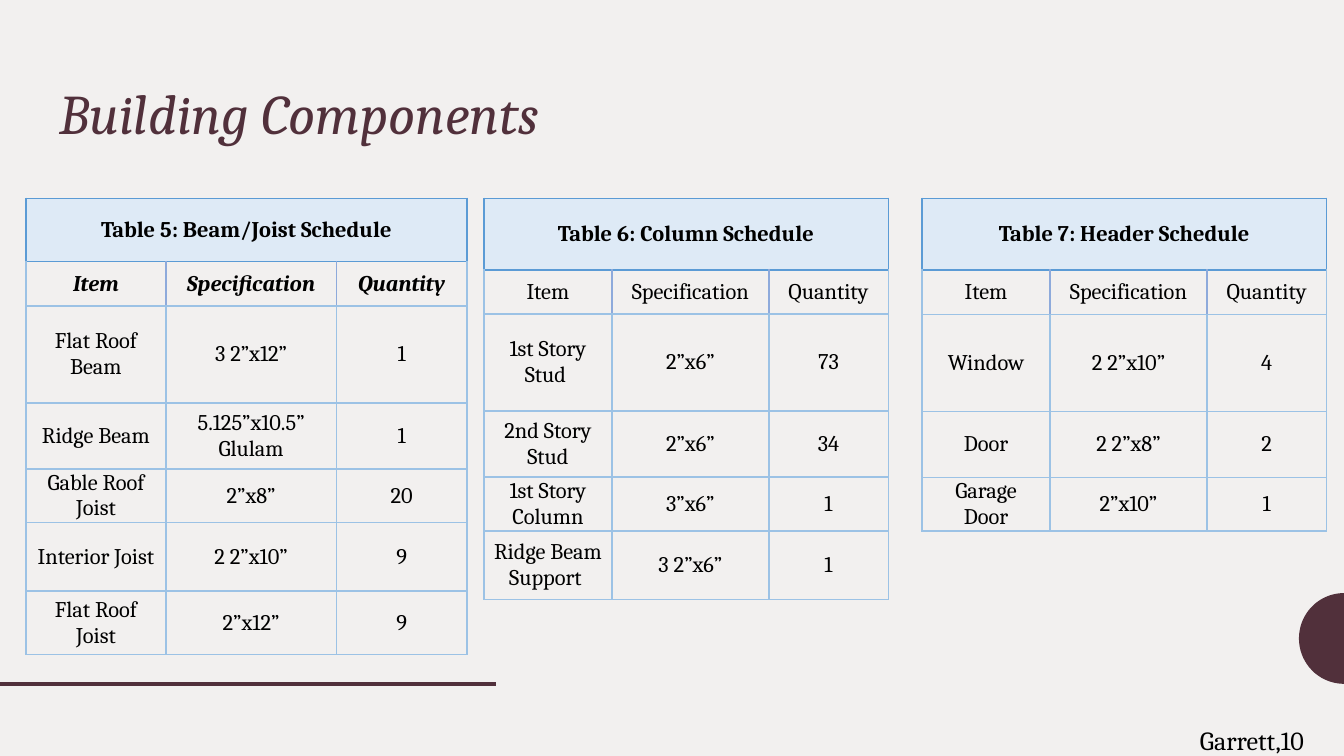
import math

import pptx
import pptx.dml.color
import pptx.enum.shapes
import pptx.enum.text
import pptx.oxml.ns
import pptx.util
from lxml import etree

WIDE = pptx.util.Inches(10)
HIGH = WIDE * 9 // 16
PLUM = "51303B"
SKY = "9CC2E5"
BLUE = "5B9BD5"
SLATE = "8EAADB"
MID = pptx.enum.text.MSO_ANCHOR.MIDDLE
LEFT = pptx.enum.text.PP_ALIGN.LEFT
CENTER = pptx.enum.text.PP_ALIGN.CENTER

HEADS = ["Item", "Specification", "Quantity"]
BEAMS = [
    ["Flat Roof Beam", "3 2”x12”", "1"],
    ["Ridge Beam", "5.125”x10.5” Glulam", "1"],
    ["Gable Roof Joist", "2”x8”", "20"],
    ["Interior Joist ", "2 2”x10”", "9"],
    ["Flat Roof Joist", "2”x12”", "9"],
]
POSTS = [
    ["1st Story Stud ", "2”x6”", "73"],
    ["2nd Story Stud", "2”x6”", "34"],
    ["1st Story Column", "3”x6”", "1"],
    ["Ridge Beam Support ", "3 2”x6”", "1"],
]
DOORS = [
    ["Window", "2 2”x10”", "4"],
    ["Door", "2 2”x8”", "2"],
    ["Garage Door", "2”x10”", "1"],
]
COLS = [104, 127, 97]
ROWS = [33, 72, 49, 38, 51, 47]


def color(code):
    return pptx.dml.color.RGBColor.from_string(code)


def area(left, top, width, height):
    return (int(WIDE * left / 100), int(HIGH * top / 100),
            int(WIDE * width / 100), int(HIGH * height / 100))


def write(frame, text, size=12, tint="000000", bold=False, slant=False,
          align=LEFT, hang=0, space=None):
    para = frame.paragraphs[0]
    para.alignment = align
    para.line_spacing = space
    if hang:
        prop = para._p.get_or_add_pPr()
        prop.set("marL", "0")
        prop.set("indent", str(-pptx.util.Inches(hang)))
    run = para.add_run()
    run.text = text
    run.font.name = "Cambria"
    run.font.size = pptx.util.Pt(size)
    run.font.bold = bold
    run.font.italic = slant
    run.font.color.rgb = color(tint)


def label(slide, box, text, anchor, **form):
    frame = slide.shapes.add_textbox(*box).text_frame
    frame.word_wrap = True
    frame.vertical_anchor = anchor
    for side in ("left", "top", "right", "bottom"):
        setattr(frame, "margin_" + side, pptx.util.Inches(0.1))
    write(frame, text, **form)


def edge(cell, sides):
    prop = cell._tc.get_or_add_tcPr()
    for side, tint in zip("LRTB", sides):
        line = etree.SubElement(prop, pptx.oxml.ns.qn("a:ln" + side),
                                w=str(pptx.util.Pt(1)))
        fill = etree.SubElement(line, pptx.oxml.ns.qn("a:solidFill"))
        etree.SubElement(fill, pptx.oxml.ns.qn("a:srgbClr"), val=tint)


def style(cell, row, col):
    if row == 0:
        edge(cell, [BLUE] * 4)
        cell.fill.solid()
        cell.fill.fore_color.rgb = color("DEEAF6")
    else:
        head = row == 1
        edge(cell, [SLATE if head and col > 0 else SKY,
                    SLATE if head and col < 2 else SKY,
                    BLUE if head else SKY, SKY])
        cell.fill.background()
    cell.vertical_anchor = MID
    cell.margin_left = cell.margin_right = pptx.util.Inches(0.07)
    cell.margin_top = cell.margin_bottom = 0


def chart(slide, box, title, body, top, strong=False):
    data = [[title, "", ""], HEADS] + body
    grid = slide.shapes.add_table(len(data), 3, *box).table
    grid.first_row = grid.horz_banding = False
    for col, part in zip(grid.columns, COLS):
        col.width = int(box[2] * part / sum(COLS))
    parts = [top] + ROWS[:len(data) - 1]
    for row, part in zip(grid.rows, parts):
        row.height = int(box[3] * part / sum(parts))
    grid.cell(0, 0).merge(grid.cell(0, 2))
    for r, line in enumerate(data):
        for c, text in enumerate(line):
            cell = grid.cell(r, c)
            style(cell, r, c)
            if text:
                loud = strong and r == 1
                write(cell.text_frame, text, bold=r == 0 or loud, slant=loud,
                      align=CENTER, hang=0.08 if r and c < 2 else 0)


def trim(slide, disc, rule):
    left, top, width, height = disc
    steps = 48
    turns = [math.pi * (0.5 + k / steps) for k in range(steps + 1)]
    spots = [(left + width + width * math.cos(t),
              top + height / 2 * (1 - math.sin(t))) for t in turns]
    pen = slide.shapes.build_freeform(*spots[0])
    pen.add_line_segments(spots[1:], close=True)
    half = pen.convert_to_shape()
    half.shadow.inherit = False
    half.fill.solid()
    half.fill.fore_color.rgb = color(PLUM)
    half.line.fill.background()
    x, y, span, _ = rule
    line = slide.shapes.add_connector(
        pptx.enum.shapes.MSO_CONNECTOR.STRAIGHT, x, y, x + span, y)
    line.line.color.rgb = color(PLUM)
    line.line.width = pptx.util.Pt(2)
    etree.SubElement(line._element.spPr, pptx.oxml.ns.qn("a:effectLst"))


def main():
    deck = pptx.Presentation()
    deck.slide_width, deck.slide_height = WIDE, HIGH
    slide = deck.slides.add_slide(deck.slide_layouts[6])
    slide.background.fill.solid()
    slide.background.fill.fore_color.rgb = color("F2F0EF")
    trim(slide, area(96.65, 78.45, 3.35, 12), area(0, 90.45, 36.9, 0))
    label(slide, area(3.45, 6.5, 87, 14.7), "Building Components",
          pptx.enum.text.MSO_ANCHOR.BOTTOM,
          size=30, tint=PLUM, slant=True, space=0.9)
    label(slide, area(88.3, 95, 14, 5.7), "Garrett,10", MID, size=14)
    chart(slide, area(1.94, 26.25, 32.8, 60),
          "Table 5: Beam/Joist Schedule", BEAMS, 47, strong=True)
    chart(slide, area(36, 26.25, 30.1, 52.7),
          "Table 6: Column Schedule", POSTS, 53)
    chart(slide, area(68.6, 26.25, 30.1, 43.7),
          "Table 7: Header Schedule", DOORS, 53)
    deck.save("out.pptx")


if __name__ == "__main__":
    main()
